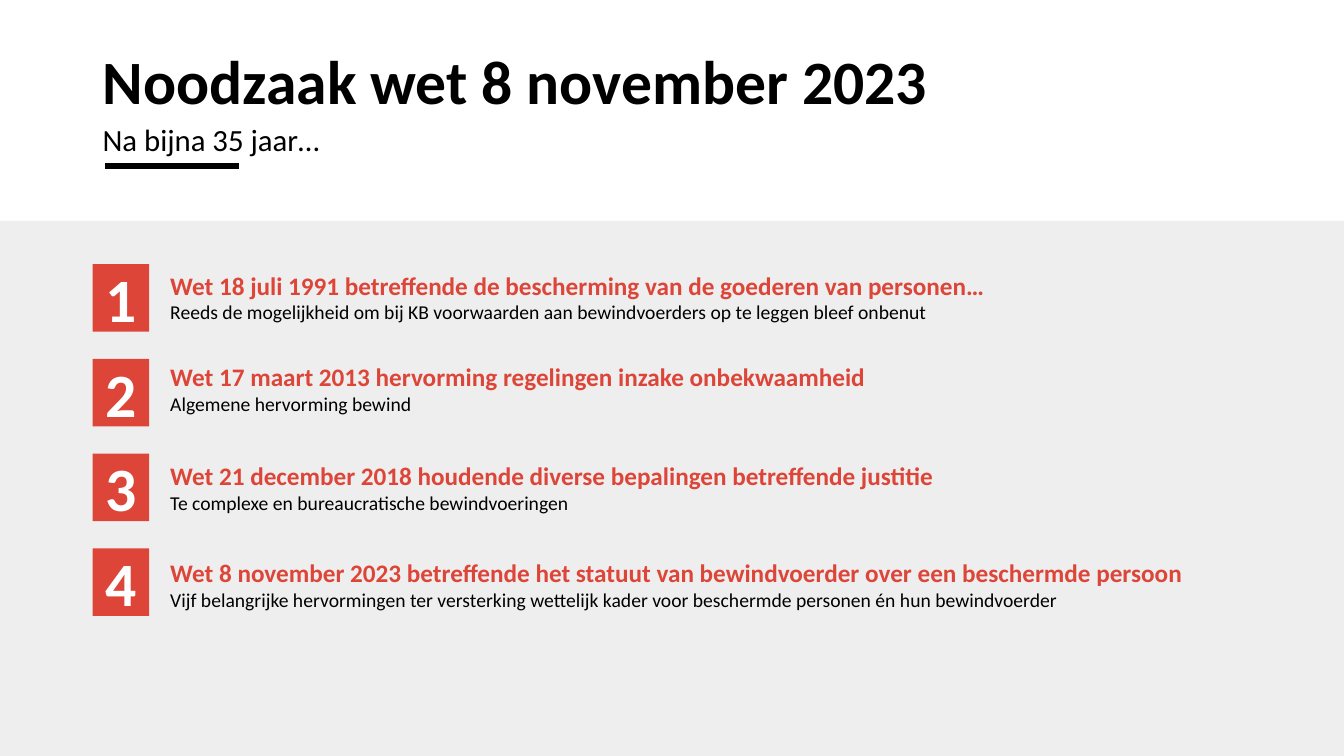
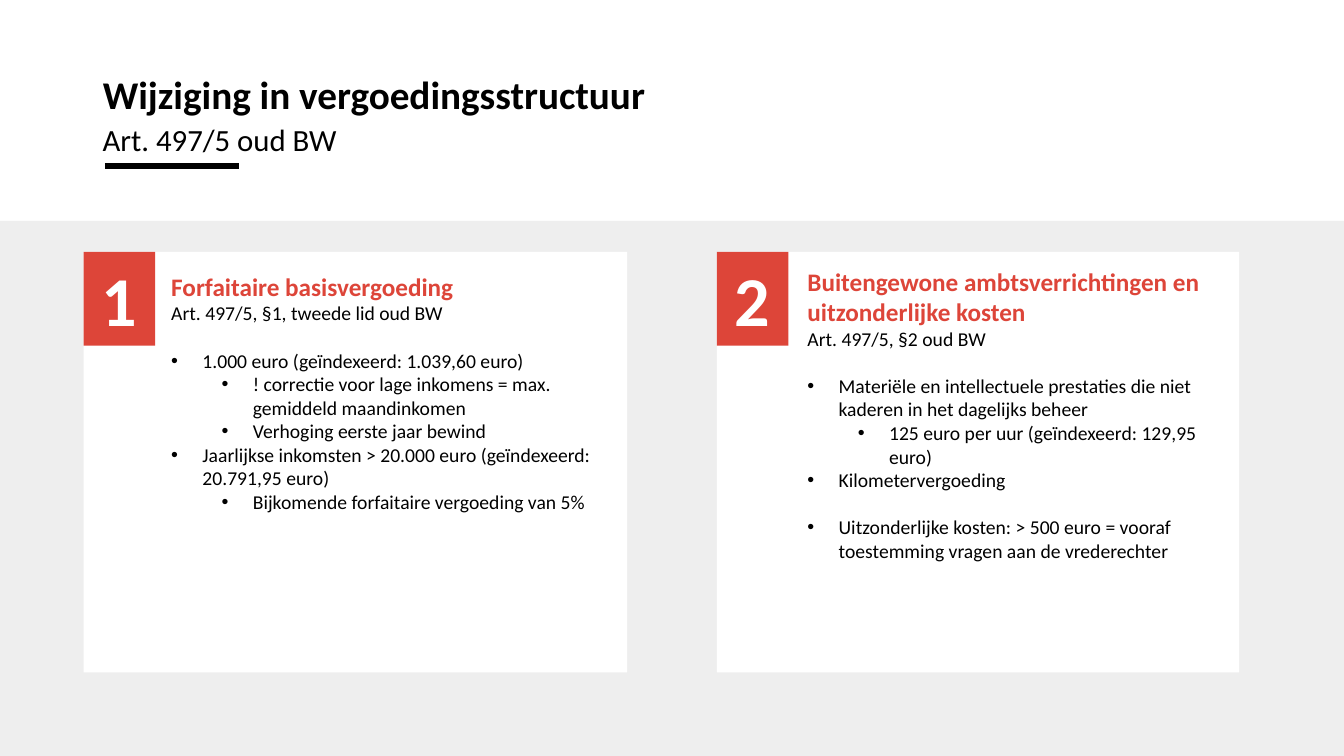
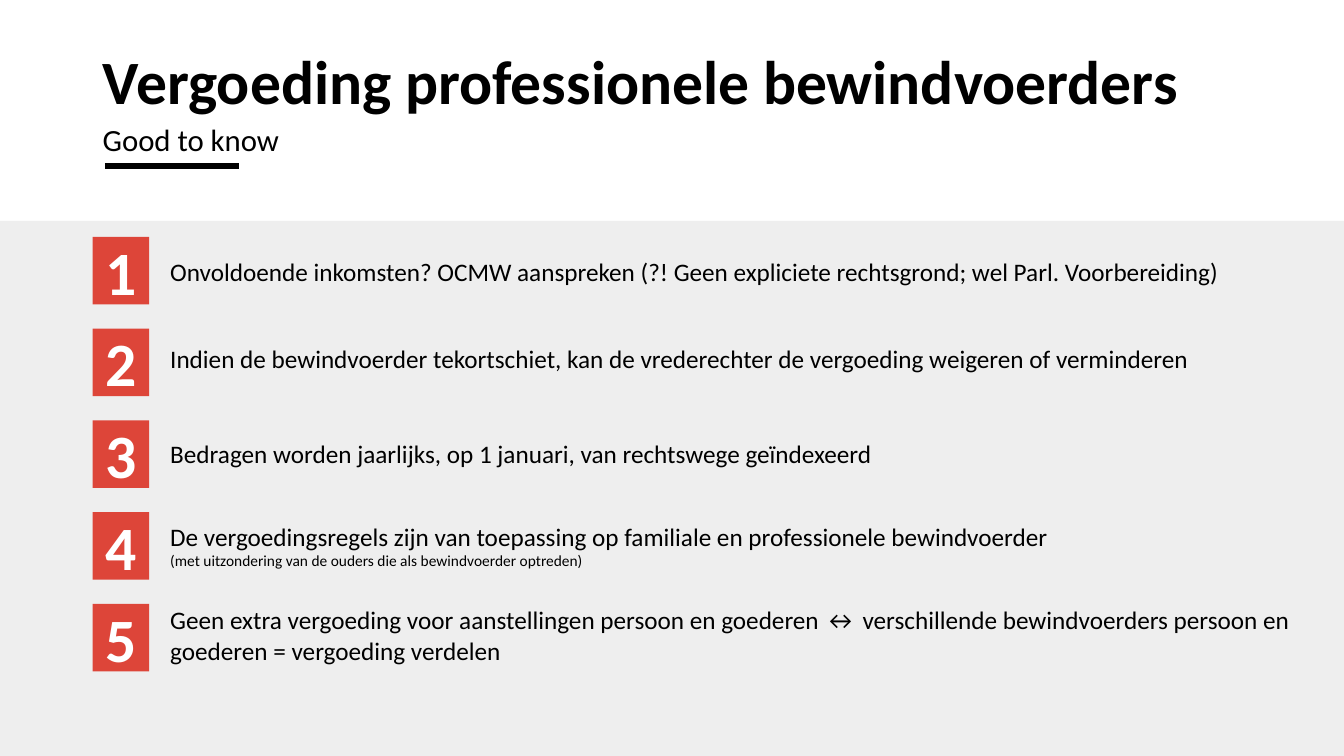
from dataclasses import dataclass

from lxml import etree
from pptx import Presentation
from pptx.dml.color import RGBColor
from pptx.enum.shapes import MSO_CONNECTOR, MSO_SHAPE
from pptx.enum.text import MSO_ANCHOR, PP_ALIGN
from pptx.oxml.ns import qn
from pptx.util import Inches, Pt

RECTANGLE = MSO_SHAPE.RECTANGLE
STRAIGHT = MSO_CONNECTOR.STRAIGHT
TOP, MIDDLE, BOTTOM = MSO_ANCHOR.TOP, MSO_ANCHOR.MIDDLE, MSO_ANCHOR.BOTTOM
LEFT, CENTER = PP_ALIGN.LEFT, PP_ALIGN.CENTER

FONT = "Calibri"
COLORS = {"red": "DD4539", "band": "EEEEEE", "white": "FFFFFF", "black": "000000"}
TITLE_ONLY = 5
SLIDE_WIDTH, SLIDE_HEIGHT = 13.33, 7.5
BAND_TOP = 2.19
HEADER_LEFT, HEADER_WIDTH = 0.92, 11.5
BADGE_WIDTH, BADGE_HEIGHT = 0.56, 0.67
ROW_TEXT_LEFT, ROW_TEXT_WIDTH = 1.59, 11.34
CARD_TOP, CARD_HEIGHT = 2.5, 4.17
BULLET_INDENT, LEVEL_STEP = 0.31, 0.5
GROUP_GAP = 17


@dataclass
class Line:
    text: str
    size: float = 14
    color: str = "black"
    bold: bool = False
    bullet_level: int | None = None
    space_before: float = 0
    line_spacing: float = 1.0
    align: PP_ALIGN = LEFT


@dataclass
class Row:
    text_top: float
    text_height: float
    lines: list[Line]


@dataclass
class Card:
    left: float
    width: float
    text_left: float
    text_top: float
    text_width: float
    text_height: float
    lines: list[Line]


def heading(text: str) -> Line:
    return Line(text, 18, "red", True)


def statement(text: str) -> Line:
    return Line(text, 18)


def bullet(text: str, level: int = 0, space_before: float = 0) -> Line:
    return Line(text, bullet_level=level, space_before=space_before)


def add_bullet(paragraph, level: int) -> None:
    paragraph.level = level
    properties = paragraph._p.get_or_add_pPr()
    properties.set("marL", str(Inches(BULLET_INDENT + level * LEVEL_STEP)))
    properties.set("indent", str(-Inches(BULLET_INDENT)))
    etree.SubElement(properties, qn("a:buFont")).set("typeface", "Arial")
    etree.SubElement(properties, qn("a:buChar")).set("char", "•")


def write_lines(shape, lines: list[Line], anchor: MSO_ANCHOR = TOP) -> None:
    frame = shape.text_frame
    frame.word_wrap = True
    frame.vertical_anchor = anchor
    for index, line in enumerate(lines):
        paragraph = frame.add_paragraph() if index else frame.paragraphs[0]
        if line.bullet_level is not None:
            add_bullet(paragraph, line.bullet_level)
        paragraph.alignment = line.align
        paragraph.line_spacing = line.line_spacing
        paragraph.space_before = Pt(line.space_before)
        run = paragraph.add_run()
        run.text = line.text
        run.font.name = FONT
        run.font.size = Pt(line.size)
        run.font.bold = line.bold
        run.font.color.rgb = RGBColor.from_string(COLORS[line.color])


def add_text(slide, left: float, top: float, width: float, height: float,
             lines: list[Line]) -> None:
    box = slide.shapes.add_textbox(Inches(left), Inches(top), Inches(width), Inches(height))
    write_lines(box, lines)


def add_rectangle(slide, left: float, top: float, width: float, height: float, color: str):
    shape = slide.shapes.add_shape(
        RECTANGLE, Inches(left), Inches(top), Inches(width), Inches(height))
    shape.shadow.inherit = False
    shape.fill.solid()
    shape.fill.fore_color.rgb = RGBColor.from_string(COLORS[color])
    shape.line.fill.background()
    return shape


def add_badge(slide, left: float, top: float, width: float, height: float,
              number: int, size: float) -> None:
    badge = add_rectangle(slide, left, top, width, height, "red")
    write_lines(badge, [Line(str(number), size, "white", True, align=CENTER)], MIDDLE)


def start_slide(presentation, title: str, subtitle: str, title_size: float = 44):
    slide = presentation.slides.add_slide(presentation.slide_layouts[TITLE_ONLY])
    # Grey content band and short rule under the header
    add_rectangle(slide, 0, BAND_TOP, SLIDE_WIDTH, SLIDE_HEIGHT - BAND_TOP, "band")
    rule = slide.shapes.add_connector(
        STRAIGHT, Inches(1.04), Inches(1.65), Inches(2.37), Inches(1.65))
    rule.line.color.rgb = RGBColor.from_string(COLORS["black"])
    rule.line.width = Pt(4.5)
    etree.SubElement(rule._element.spPr, qn("a:effectLst"))
    # Title and subtitle
    placeholder = slide.shapes.title
    placeholder.left, placeholder.top = Inches(HEADER_LEFT), Inches(0.55)
    placeholder.width, placeholder.height = Inches(HEADER_WIDTH), Inches(0.67)
    write_lines(placeholder, [Line(title, title_size, bold=True, line_spacing=0.9)], BOTTOM)
    add_text(slide, HEADER_LEFT, 1.19, HEADER_WIDTH, 0.52,
             [Line(subtitle, 22, line_spacing=0.9)])
    return slide


def add_rows(slide, first_top: float, pitch: float, rows: list[Row]) -> None:
    for index, row in enumerate(rows):
        add_badge(slide, HEADER_LEFT, first_top + index * pitch,
                  BADGE_WIDTH, BADGE_HEIGHT, index + 1, 44)
        add_text(slide, ROW_TEXT_LEFT, row.text_top, ROW_TEXT_WIDTH, row.text_height, row.lines)


def add_cards(slide, cards: list[Card]) -> None:
    for number, card in enumerate(cards, start=1):
        add_rectangle(slide, card.left, CARD_TOP, card.width, CARD_HEIGHT, "white")
        add_badge(slide, card.left, CARD_TOP, 0.71, 0.93, number, 50)
        add_text(slide, card.text_left, card.text_top, card.text_width, card.text_height,
                 card.lines)


LAWS = [
    Row(2.63, 0.64, [
        heading("Wet 18 juli 1991 betreffende de bescherming van de goederen van personen…"),
        Line("Reeds de mogelijkheid om bij KB voorwaarden aan bewindvoerders "
             "op te leggen bleef onbenut")]),
    Row(3.54, 0.64, [
        heading("Wet 17 maart 2013 hervorming regelingen inzake onbekwaamheid"),
        Line("Algemene hervorming bewind")]),
    Row(4.52, 0.64, [
        heading("Wet 21 december 2018 houdende diverse bepalingen betreffende justitie"),
        Line("Te complexe en bureaucratische bewindvoeringen")]),
    Row(5.48, 0.64, [
        heading("Wet 8 november 2023 betreffende het statuut van bewindvoerder "
                "over een beschermde persoon"),
        Line("Vijf belangrijke hervormingen ter versterking wettelijk kader "
             "voor beschermde personen én hun bewindvoerder")]),
]

FEES = [
    Card(0.83, 5.39, 1.6, 2.64, 4.56, 2.76, [
        heading("Forfaitaire basisvergoeding"),
        Line("Art. 497/5, §1, tweede lid oud BW"),
        bullet("1.000 euro (geïndexeerd: 1.039,60 euro)", space_before=GROUP_GAP),
        bullet("! correctie voor lage inkomens = max. gemiddeld maandinkomen", 1),
        bullet("Verhoging eerste jaar bewind", 1),
        bullet("Jaarlijkse inkomsten > 20.000 euro (geïndexeerd: 20.791,95 euro)"),
        bullet("Bijkomende forfaitaire vergoeding van 5%", 1)]),
    Card(7.11, 5.18, 7.91, 2.59, 4.38, 3.53, [
        heading("Buitengewone ambtsverrichtingen en uitzonderlijke kosten"),
        Line("Art. 497/5, §2 oud BW"),
        bullet("Materiële en intellectuele prestaties die niet kaderen "
               "in het dagelijks beheer", space_before=GROUP_GAP),
        bullet("125 euro per uur (geïndexeerd: 129,95 euro)", 1),
        bullet("Kilometervergoeding"),
        bullet("Uitzonderlijke kosten: > 500 euro = vooraf toestemming vragen "
               "aan de vrederechter", space_before=GROUP_GAP)]),
]

FACTS = [
    Row(2.49, 0.4, [statement("Onvoldoende inkomsten? OCMW aanspreken "
                              "(?! Geen expliciete rechtsgrond; wel Parl. Voorbereiding)")]),
    Row(3.36, 0.4, [statement("Indien de bewindvoerder tekortschiet, kan de vrederechter "
                              "de vergoeding weigeren of verminderen")]),
    Row(4.3, 0.4, [statement("Bedragen worden jaarlijks, op 1 januari, "
                             "van rechtswege geïndexeerd")]),
    Row(5.12, 0.59, [
        statement("De vergoedingsregels zijn van toepassing op familiale "
                  "en professionele bewindvoerder"),
        Line("(met uitzondering van de ouders die als bewindvoerder optreden)", 11)]),
    Row(5.95, 0.71, [statement("Geen extra vergoeding voor aanstellingen persoon en goederen ↔ "
                               "verschillende bewindvoerders persoon en goederen "
                               "= vergoeding verdelen")]),
]


def main() -> None:
    presentation = Presentation()
    presentation.slide_width = Inches(SLIDE_WIDTH)
    presentation.slide_height = Inches(SLIDE_HEIGHT)

    # Slide 1: the laws that led to the reform
    slide = start_slide(presentation, "Noodzaak wet 8 november 2023", "Na bijna 35 jaar…")
    add_rows(slide, 2.62, 0.94, LAWS)

    # Slide 2: the two kinds of fee
    slide = start_slide(presentation, "Wijziging in vergoedingsstructuur",
                        "Art. 497/5 oud BW", 28)
    add_cards(slide, FEES)

    # Slide 3: good to know
    slide = start_slide(presentation, "Vergoeding professionele bewindvoerders", "Good to know")
    add_rows(slide, 2.35, 0.91, FACTS)

    presentation.save("out.pptx")


if __name__ == "__main__":
    main()
